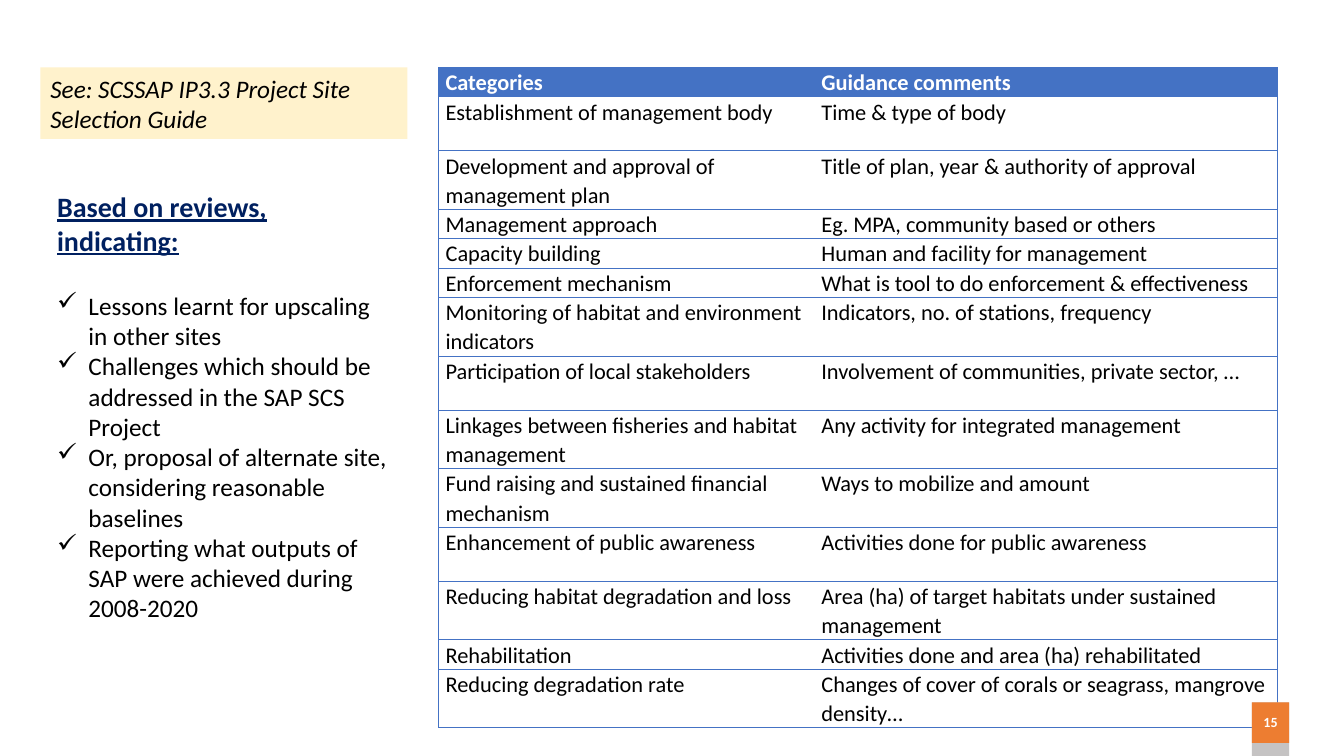
from lxml import etree
from pptx import Presentation
from pptx.dml.color import RGBColor
from pptx.enum.shapes import MSO_SHAPE
from pptx.enum.text import MSO_ANCHOR, PP_ALIGN
from pptx.oxml.ns import qn
from pptx.util import Cm, Pt

RECT = MSO_SHAPE.RECTANGLE
MIDDLE = MSO_ANCHOR.MIDDLE
LEFT = PP_ALIGN.LEFT
CENTER = PP_ALIGN.CENTER

BLACK = RGBColor(0x00, 0x00, 0x00)
WHITE = RGBColor(0xFF, 0xFF, 0xFF)
NAVY = RGBColor(0x00, 0x20, 0x60)
BLUE = RGBColor(0x44, 0x72, 0xC4)
CREAM = RGBColor(0xFF, 0xF2, 0xCC)
ORANGE = RGBColor(0xED, 0x7D, 0x31)
GREY = RGBColor(0xC5, 0xC3, 0xC3)

LOW, TALL = 0.66, 1.36  # row heights in cm

ROWS = [
    (LOW, "Categories", "Guidance comments"),
    (TALL, "Establishment of management body", "Time & type of body"),
    (TALL, "Development and approval of management plan",
     "Title of plan, year & authority of approval"),
    (LOW, "Management approach", "Eg. MPA, community based or others"),
    (LOW, "Capacity building", "Human and facility for management"),
    (LOW, "Enforcement mechanism",
     "What is tool to do enforcement & effectiveness"),
    (TALL, "Monitoring of habitat and environment indicators",
     "Indicators, no. of stations, frequency"),
    (TALL, "Participation of local stakeholders",
     "Involvement of communities, private sector, …"),
    (TALL, "Linkages between fisheries and habitat management",
     "Any activity for integrated management"),
    (TALL, "Fund raising and sustained financial mechanism",
     "Ways to mobilize and amount"),
    (TALL, "Enhancement of public awareness",
     "Activities done for public awareness"),
    (TALL, "Reducing habitat degradation and loss",
     "Area (ha) of target habitats under sustained management"),
    (LOW, "Rehabilitation", "Activities done and area (ha) rehabilitated"),
    (TALL, "Reducing degradation rate",
     "Changes of cover of corals or seagrass, mangrove density…"),
]

POINTS = [
    "Lessons learnt for upscaling in other sites",
    "Challenges which should be addressed in the SAP SCS Project",
    "Or, proposal of alternate site, considering reasonable baselines",
    "Reporting what outputs of SAP were achieved during 2008-2020",
]


class Board:
    def __init__(self, slide, face="Calibri"):
        self.slide = slide
        self.face = face

    def label(self, para, text, size, color=BLACK, bold=False, italic=False):
        para.text = text
        font = para.font
        font.name, font.size = self.face, Pt(size)
        font.bold, font.italic = bold, italic
        font.color.rgb = color

    def box(self, left, top, width, height, fill):
        shape = self.slide.shapes.add_shape(
            RECT, Cm(left), Cm(top), Cm(width), Cm(height))
        shape.shadow.inherit = False
        shape.fill.solid()
        shape.fill.fore_color.rgb = fill
        shape.line.fill.background()
        return shape

    def note(self, left, top, width, height, fill, text):
        frame = self.box(left, top, width, height, fill).text_frame
        frame.word_wrap = True
        para = frame.paragraphs[0]
        para.alignment = LEFT
        self.label(para, text, 18, italic=True)

    def badge(self, left, top, width, height, fill, text):
        frame = self.box(left, top, width, height, fill).text_frame
        frame.margin_left = frame.margin_right = 0
        frame.vertical_anchor = MIDDLE
        para = frame.paragraphs[0]
        para.alignment = CENTER
        para.line_spacing, para.space_before = 0.9, Pt(10)
        self.label(para, text, 10, WHITE, bold=True)

    def points(self, left, top, width, height, title, items):
        frame = self.slide.shapes.add_textbox(
            Cm(left), Cm(top), Cm(width), Cm(height)).text_frame
        frame.word_wrap = True
        head = frame.paragraphs[0]
        self.label(head, title, 20, NAVY, bold=True)
        head.font.underline = True
        head.space_after = Pt(24)
        for item in items:
            para = frame.add_paragraph()
            self.label(para, item, 18)
            props = para._p.get_or_add_pPr()
            props.set("marL", str(Cm(0.79)))
            props.set("indent", str(-Cm(0.79)))
            tick = etree.Element(qn("a:buChar"), char="✓")
            props.insert(0, tick)

    def edge(self, cell, side, color):
        line = etree.SubElement(
            cell._tc.get_or_add_tcPr(), qn("a:ln" + side), w=str(Pt(0.5)))
        if color is None:
            etree.SubElement(line, qn("a:noFill"))
        else:
            fill = etree.SubElement(line, qn("a:solidFill"))
            etree.SubElement(fill, qn("a:srgbClr"), val=str(color))

    def table(self, left, top, widths, rows):
        grid = self.slide.shapes.add_table(
            len(rows), len(widths), Cm(left), Cm(top), Cm(sum(widths)),
            Cm(sum(row[0] for row in rows))).table
        for col, width in zip(grid.columns, widths):
            col.width = Cm(width)
        for r, (height, *texts) in enumerate(rows):
            grid.rows[r].height = Cm(height)
            for c, text in enumerate(texts):
                self.cell(grid.cell(r, c), text, r == 0,
                          c == 0, c == len(widths) - 1)

    def cell(self, cell, text, head, first, last):
        cell.margin_left = cell.margin_right = Cm(0.18)
        cell.margin_top = cell.margin_bottom = 0
        # Outer frame and row rules only, no inner upright
        self.edge(cell, "L", BLUE if first else None)
        self.edge(cell, "R", BLUE if last else None)
        self.edge(cell, "T", BLUE)
        self.edge(cell, "B", BLUE)
        if head:
            cell.fill.solid()
            cell.fill.fore_color.rgb = BLUE
        else:
            cell.fill.background()
        para = cell.text_frame.paragraphs[0]
        para.line_spacing, para.space_after = 1.07, Pt(8)
        self.label(para, text, 16, WHITE if head else BLACK, bold=head)


def main():
    deck = Presentation()
    deck.slide_width, deck.slide_height = Cm(33.87), Cm(19.05)
    board = Board(deck.slides.add_slide(deck.slide_layouts[6]))

    # Guidance table
    board.table(11.05, 1.7, [9.47, 11.68], ROWS)

    # Review points
    board.points(1.19, 4.65, 8.89, 12.07, "Based on reviews, indicating:", POINTS)

    # Page number
    board.box(31.55, 17.7, 0.94, 1.35, GREY)
    board.badge(31.55, 17.7, 0.94, 1.02, ORANGE, "15")

    # Reference note
    board.note(1.02, 1.7, 9.25, 1.8, CREAM,
               "See: SCSSAP IP3.3 Project Site Selection Guide")

    deck.save("out.pptx")


if __name__ == "__main__":
    main()
